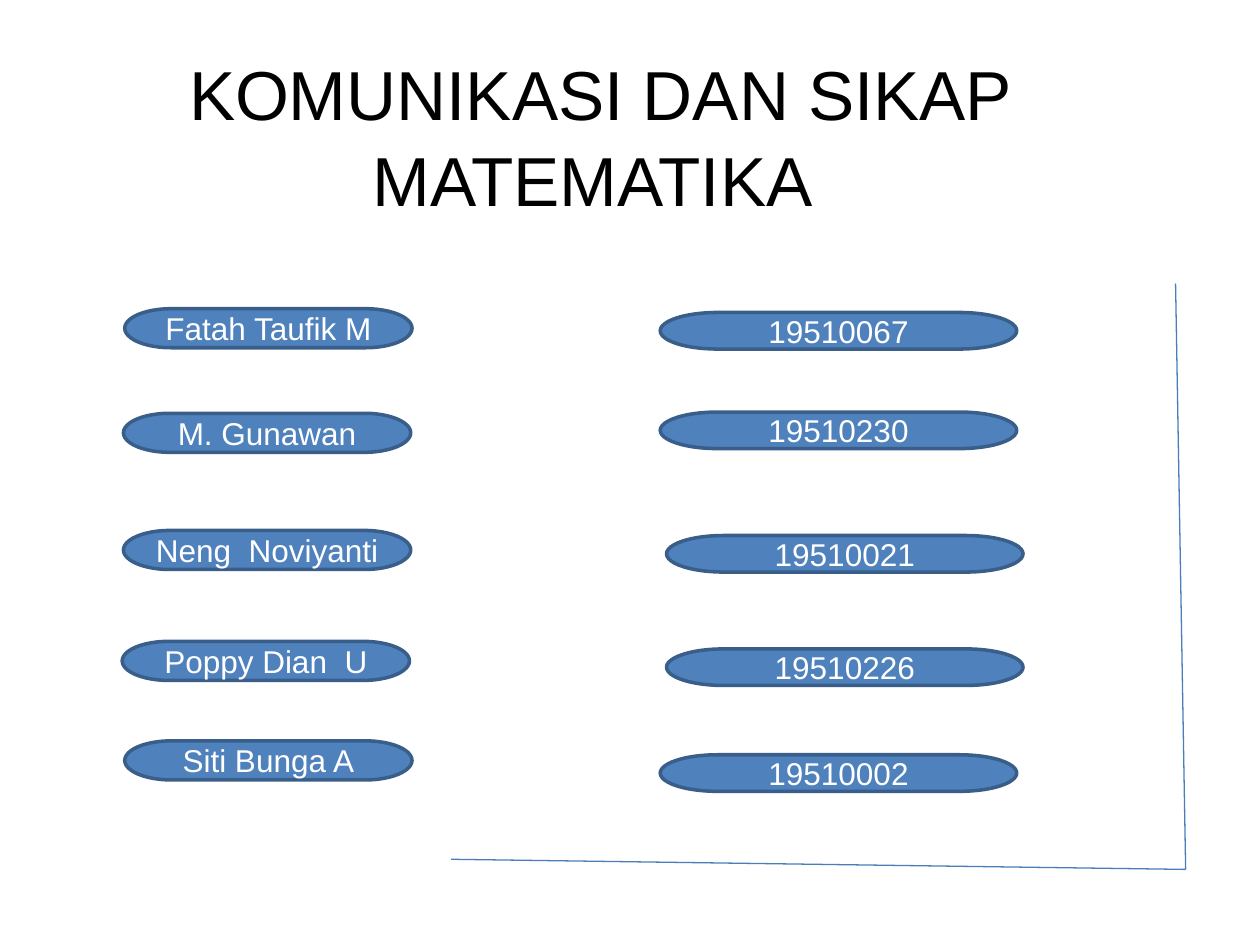
from dataclasses import dataclass

from lxml.etree import SubElement
from pptx import Presentation
from pptx.dml.color import RGBColor
from pptx.enum.shapes import MSO_CONNECTOR as Link, MSO_SHAPE as Form
from pptx.enum.text import MSO_ANCHOR as Anchor, MSO_AUTO_SIZE as Fit, PP_ALIGN as Align
from pptx.oxml.ns import qn
from pptx.slide import Slide
from pptx.text.text import TextFrame
from pptx.util import Inches, Pt

FONT = "Arial"
BLUE, EDGE, RULE = "4F81BD", "395E89", "4A7DBA"
WHITE, BLACK = "FFFFFF", "000000"
NAME_SIZE = (2.28, 0.31)
CODE_SIZE = (2.83, 0.29)
CORNER = (9.41, 6.9)


@dataclass
class Pill:
    text: str
    left: float
    top: float


NAMES = [
    Pill("Fatah Taufik M", 0.99, 2.45),
    Pill("M. Gunawan", 0.98, 3.28),
    Pill("Neng  Noviyanti", 0.98, 4.21),
    Pill("Poppy Dian  U", 0.97, 5.09),
    Pill("Siti Bunga A", 0.99, 5.88),
]
CODES = [
    Pill("19510067", 5.24, 2.48),
    Pill("19510230", 5.24, 3.27),
    Pill("19510021", 5.29, 4.25),
    Pill("19510226", 5.29, 5.15),
    Pill("19510002", 5.24, 5.99),
]


def tint(code: str) -> RGBColor:
    return RGBColor.from_string(code)


def write(frame: TextFrame, text: str, size: float, color: str) -> None:
    frame.word_wrap = True
    frame.auto_size = Fit.NONE
    frame.vertical_anchor = Anchor.MIDDLE
    para = frame.paragraphs[0]
    para.alignment = Align.CENTER
    run = para.add_run()
    run.text = text
    run.font.name = FONT
    run.font.size = Pt(size)
    run.font.color.rgb = tint(color)


def add_title(slide: Slide, text: str) -> None:
    title = slide.shapes.title
    title.left, title.top = Inches(0.59), Inches(0.44)
    title.width, title.height = Inches(8.35), Inches(1.26)
    write(title.text_frame, text, 39.6, BLACK)
    title.text_frame.paragraphs[0].line_spacing = 1.03


def add_pill(slide: Slide, pill: Pill, size: tuple[float, float]) -> None:
    box = map(Inches, (pill.left, pill.top, *size))
    shape = slide.shapes.add_shape(Form.FLOWCHART_TERMINATOR, *box)
    shape.shadow.inherit = False
    shape.fill.solid()
    shape.fill.fore_color.rgb = tint(BLUE)
    shape.line.color.rgb = tint(EDGE)
    shape.line.width = Pt(2)
    write(shape.text_frame, pill.text, 18, WHITE)


def add_rule(slide: Slide, start: tuple[float, float], end: tuple[float, float]) -> None:
    ends = map(Inches, (*start, *end))
    rule = slide.shapes.add_connector(Link.STRAIGHT, *ends)
    rule.line.color.rgb = tint(RULE)
    rule.line.width = Pt(0.75)
    SubElement(rule._element.spPr, qn("a:effectLst"))


def main() -> None:
    deck = Presentation()
    deck.slide_width, deck.slide_height = Inches(10), Inches(7.5)
    slide = deck.slides.add_slide(deck.slide_layouts[5])
    add_title(slide, "KOMUNIKASI DAN SIKAP MATEMATIKA ")
    for pills, size in ((NAMES, NAME_SIZE), (CODES, CODE_SIZE)):
        for pill in pills:
            add_pill(slide, pill, size)
    for start in ((9.33, 2.25), (3.58, 6.82)):
        add_rule(slide, start, CORNER)
    deck.save("out.pptx")


if __name__ == "__main__":
    main()
